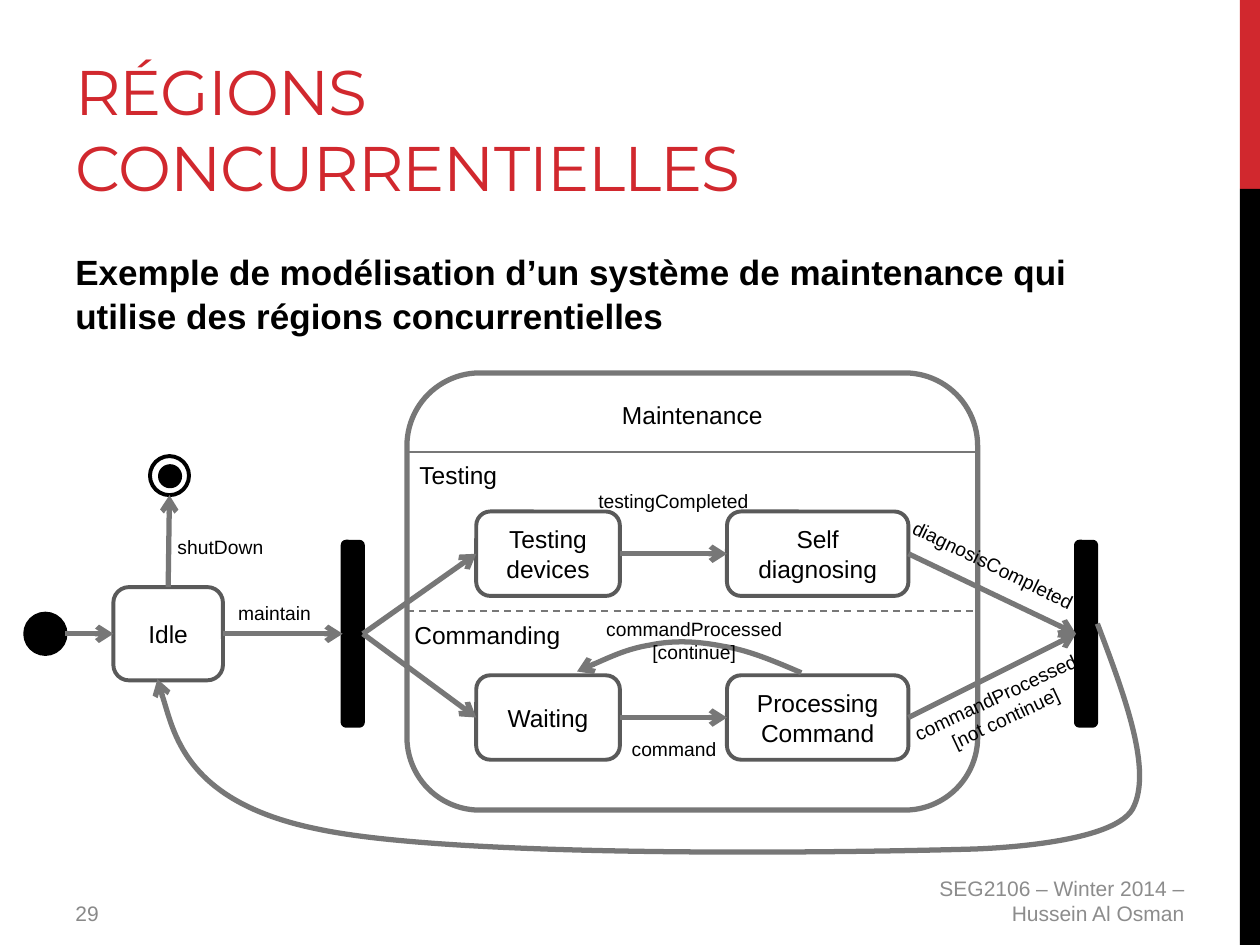
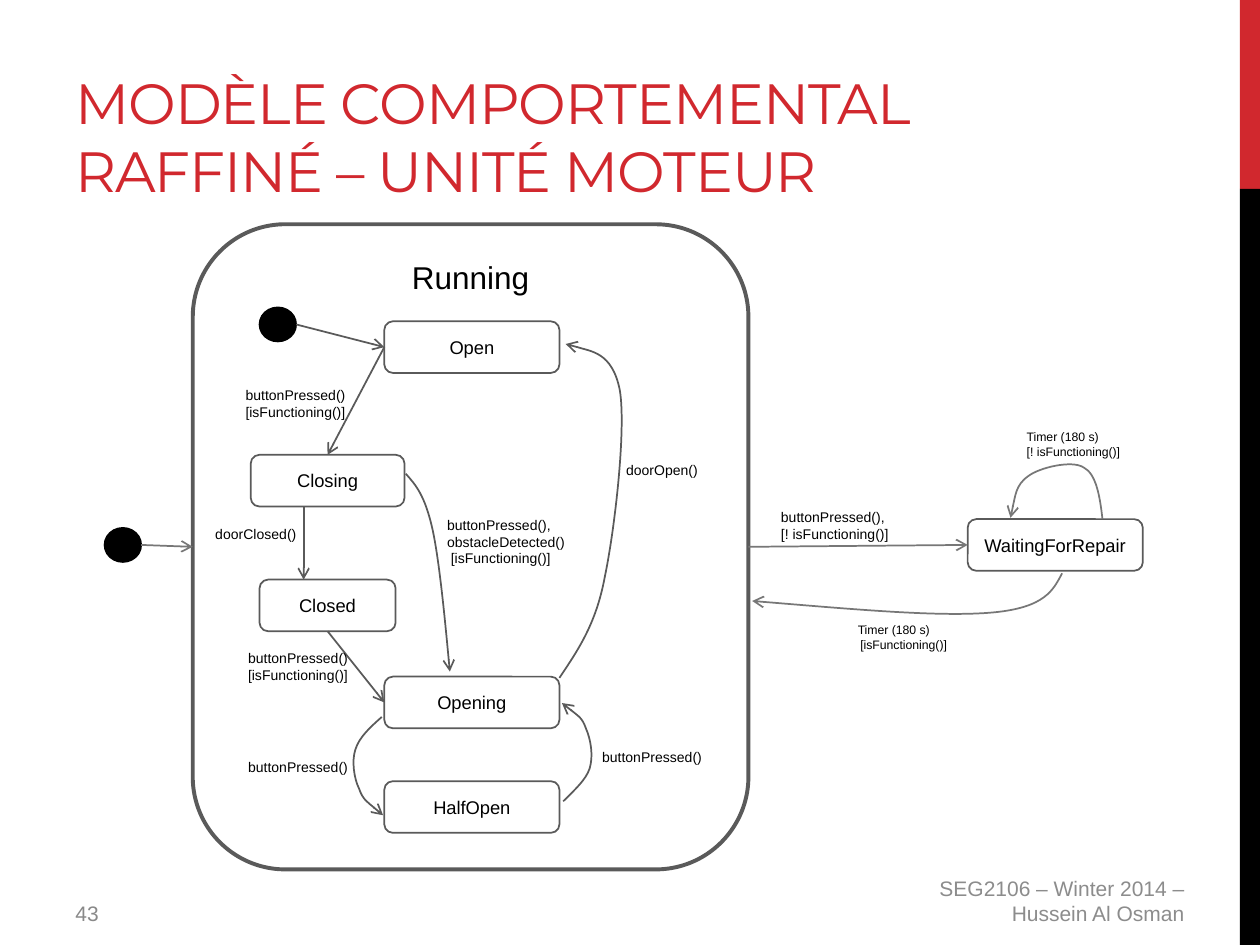
from dataclasses import dataclass
from typing import Any, NamedTuple, Optional

from lxml import etree
from pptx import Presentation
from pptx.dml.color import RGBColor
from pptx.enum.dml import MSO_LINE
from pptx.enum.shapes import MSO_CONNECTOR, MSO_SHAPE
from pptx.enum.text import MSO_ANCHOR, PP_ALIGN
from pptx.oxml.ns import qn
from pptx.util import Inches, Pt

RECTANGLE, ROUNDED, OVAL = MSO_SHAPE.RECTANGLE, MSO_SHAPE.ROUNDED_RECTANGLE, MSO_SHAPE.OVAL
LEFT, CENTER, RIGHT = PP_ALIGN.LEFT, PP_ALIGN.CENTER, PP_ALIGN.RIGHT
TOP, MIDDLE, BOTTOM = MSO_ANCHOR.TOP, MSO_ANCHOR.MIDDLE, MSO_ANCHOR.BOTTOM
STRAIGHT, DASH = MSO_CONNECTOR.STRAIGHT, MSO_LINE.DASH

RED = RGBColor(0xD1, 0x28, 0x2E)
BLACK = RGBColor(0, 0, 0)
DARK_GREY = RGBColor(0x5A, 0x5A, 0x5A)
GREY = RGBColor(0x77, 0x77, 0x77)
FOOTER_GREY = RGBColor(0x8C, 0x8C, 0x8C)
NUMBER_GREY = RGBColor(0x89, 0x89, 0x89)

Point = tuple[float, float]


class Box(NamedTuple):
    """A rectangle in inches, with the points where arrows meet it."""
    left: float
    top: float
    width: float
    height: float

    @property
    def west(self) -> Point:
        return self.left, self.top + self.height / 2

    @property
    def east(self) -> Point:
        return self.left + self.width, self.top + self.height / 2

    @property
    def north(self) -> Point:
        return self.left + self.width / 2, self.top

    @property
    def south(self) -> Point:
        return self.left + self.width / 2, self.top + self.height


class Stroke(NamedTuple):
    color: RGBColor
    width: float


@dataclass
class TextStyle:
    size: float
    color: RGBColor = BLACK
    font: str = "Arial"
    bold: bool = False
    align: Any = LEFT
    anchor: Any = TOP
    line_spacing: Optional[float] = None
    tracking: Optional[int] = None  # hundredths of a point


@dataclass
class Label:
    lines: list[str]
    box: Box
    size: float
    align: Any = LEFT
    rotation: float = 0
    last_indent: float = 0


def apply_format(target: Any, values: dict[str, Any]) -> None:
    for name, value in values.items():
        setattr(target, name, value)


def write(shape: Any, lines: list[str], style: TextStyle) -> None:
    frame = shape.text_frame
    apply_format(frame, {"word_wrap": True, "vertical_anchor": style.anchor})
    for index, line in enumerate(lines):
        paragraph = frame.paragraphs[0] if index == 0 else frame.add_paragraph()
        apply_format(paragraph, {"alignment": style.align, "line_spacing": style.line_spacing})
        run = paragraph.add_run()
        run.text = line
        apply_format(run.font, {"size": Pt(style.size), "name": style.font, "bold": style.bold})
        run.font.color.rgb = style.color
        if style.tracking is not None:
            run.font._element.set("spc", str(style.tracking))


def add_text(slide: Any, lines: list[str], box: Box, style: TextStyle) -> Any:
    shape = slide.shapes.add_textbox(*map(Inches, box))
    write(shape, lines, style)
    return shape


def add_label(slide: Any, label: Label) -> None:
    shape = add_text(slide, label.lines, label.box, TextStyle(label.size, align=label.align))
    shape.rotation = label.rotation
    if label.last_indent:
        properties = shape.text_frame.paragraphs[-1]._p.get_or_add_pPr()
        properties.set("marL", str(Inches(label.last_indent)))


def set_stroke(shape: Any, stroke: Stroke, arrow: bool = False, dash: Any = None) -> None:
    shape.line.color.rgb = stroke.color
    apply_format(shape.line, {"width": Pt(stroke.width), "dash_style": dash})
    if arrow:
        etree.SubElement(shape.line._get_or_add_ln(), qn("a:tailEnd"), type="arrow")


def add_box(slide: Any, kind: Any, box: Box, stroke: Optional[Stroke] = None,
            fill: Optional[RGBColor] = None) -> Any:
    shape = slide.shapes.add_shape(kind, *map(Inches, box))
    shape.shadow.inherit = False
    if fill is None:
        shape.fill.background()
    else:
        shape.fill.solid()
        shape.fill.fore_color.rgb = fill
    if stroke is None:
        shape.line.fill.background()
    else:
        set_stroke(shape, stroke)
    return shape


def add_state(slide: Any, name: str, box: Box, stroke: Stroke, size: float,
              anchor: Any = MIDDLE) -> None:
    shape = add_box(slide, ROUNDED, box, stroke)
    write(shape, [name], TextStyle(size, align=CENTER, anchor=anchor))


def add_line(slide: Any, start: Point, end: Point, stroke: Stroke,
             arrow: bool = True, dash: Any = None) -> None:
    line = slide.shapes.add_connector(STRAIGHT, *map(Inches, (*start, *end)))
    set_stroke(line, stroke, arrow, dash)
    etree.SubElement(line._element.spPr, qn("a:effectLst"))


def add_curve(slide: Any, points: list[Point], stroke: Stroke) -> None:
    """Draw a Bézier arrow: a start, then two controls and an end per segment."""
    start, *others = [(Inches(x), Inches(y)) for x, y in points]
    builder = slide.shapes.build_freeform(*start)
    builder.add_line_segments(others, close=False)
    shape = builder.convert_to_shape()
    outline = next(shape._element.iter(qn("a:path")))
    segments = outline.findall(qn("a:lnTo"))
    for first in range(0, len(segments), 3):
        cubic = etree.SubElement(outline, qn("a:cubicBezTo"))
        for segment in segments[first:first + 3]:
            cubic.append(segment[0])
            outline.remove(segment)
    shape.shadow.inherit = False
    shape.fill.background()
    set_stroke(shape, stroke, arrow=True)


def add_base(presentation: Any, title: str, title_size: float, number: int) -> Any:
    """Add a slide with the side bands, title, footer and number."""
    slide = presentation.slides.add_slide(presentation.slide_layouts[6])
    add_box(slide, RECTANGLE, Box(9.84, 0, 0.16, 1.5), fill=RED)
    add_box(slide, RECTANGLE, Box(9.84, 1.5, 0.16, 6), fill=BLACK)
    add_text(slide, [title], Box(0.5, 0.17, 7.58, 1.5),
             TextStyle(title_size, RED, "Montserrat", anchor=BOTTOM, tracking=-60))
    add_text(slide, ["SEG2106 – Winter 2014 – Hussein Al Osman"], Box(7.17, 6.95, 2.33, 0.4),
             TextStyle(12, FOOTER_GREY, align=RIGHT, anchor=MIDDLE))
    add_text(slide, [str(number)], Box(0.5, 7.1, 3.75, 0.31), TextStyle(12, NUMBER_GREY))
    return slide


def build_concurrent_regions(presentation: Any) -> None:
    slide = add_base(presentation, "RÉGIONS CONCURRENTIELLES", 36, 29)
    add_text(slide, ["Exemple de modélisation d’un système de maintenance qui "
                     "utilise des régions concurrentielles"],
             Box(0.5, 1.92, 8.33, 0.89), TextStyle(20, bold=True, line_spacing=1.05))
    border, flow, divider = Stroke(DARK_GREY, 2.25), Stroke(GREY, 3), Stroke(GREY, 1)
    solid = Stroke(BLACK, 2.25)

    # States
    maintenance = Box(3.23, 2.96, 4.53, 3.47)
    idle = Box(0.9, 4.66, 0.87, 0.74)
    add_state(slide, "Maintenance", maintenance, flow, 14, TOP)
    add_state(slide, "Idle", idle, border, 14)

    # Fork, join, initial and final nodes
    fork, join = Box(2.72, 4.3, 0.16, 1.46), Box(8.54, 4.3, 0.16, 1.46)
    initial, final = Box(0.2, 4.87, 0.32, 0.32), Box(1.19, 3.62, 0.31, 0.31)
    for bar in (fork, join):
        add_box(slide, ROUNDED, bar, solid, BLACK)
    for node in (initial, Box(1.27, 3.7, 0.16, 0.16)):
        add_box(slide, OVAL, node, solid, BLACK)
    add_box(slide, OVAL, final, solid)

    # One row of two states per region
    for top, first, second in ((4.06, "Testing devices", "Self diagnosing"),
                               (5.36, "Waiting", "Processing Command")):
        entry, work = Box(3.78, top, 1.14, 0.67), Box(5.77, top, 1.44, 0.67)
        add_state(slide, first, entry, border, 14)
        add_state(slide, second, work, border, 14)
        for start, end in ((fork.east, entry.west), (entry.east, work.west),
                           (work.east, join.west)):
            add_line(slide, start, end, flow)
    for start, end in ((initial.east, idle.west), (idle.east, fork.west),
                       (idle.north, final.south)):
        add_line(slide, start, end, flow)

    # Region dividers
    for y, dash in ((3.59, None), (4.85, DASH)):
        add_line(slide, (3.23, y), (7.76, y), divider, arrow=False, dash=dash)

    # Return transitions
    add_curve(slide, [(6.36, 5.34), (6.15, 5.25), (5.94, 5.16), (5.74, 5.13), (5.54, 5.09),
                      (5.35, 5.08), (5.16, 5.12), (4.97, 5.15), (4.58, 5.33), (4.58, 5.33)], flow)
    add_curve(slide, [(8.71, 4.95), (8.93, 5.53), (9.15, 6.12), (8.99, 6.42), (8.82, 6.72),
                      (7.69, 6.74), (7.69, 6.74), (6.62, 6.77), (3.59, 6.81), (2.52, 6.58),
                      (1.44, 6.36), (1.25, 5.39), (1.25, 5.39)], flow)

    for label in (
        Label(["Testing"], Box(3.23, 3.6, 1.02, 0.34), 14),
        Label(["Commanding"], Box(3.19, 4.87, 1.37, 0.34), 14),
        Label(["command"], Box(4.75, 5.8, 1.2, 0.29), 11, CENTER),
        Label(["commandProcessed", "[continue]"], Box(4.29, 4.85, 2.44, 0.47), 11, CENTER),
        Label(["commandProcessed", "[not continue]"], Box(6.72, 5.38, 2.44, 0.47), 11, CENTER,
              334.8),
        Label(["maintain"], Box(1.61, 4.72, 1.14, 0.29), 11, CENTER),
        Label(["diagnosisCompleted"], Box(6.66, 4.34, 2.44, 0.29), 11, CENTER, 25.9),
        Label(["testingCompleted"], Box(4.59, 3.83, 1.51, 0.29), 11, CENTER),
        Label(["shutDown"], Box(1.18, 4.2, 1.14, 0.29), 11, CENTER),
    ):
        add_label(slide, label)


def build_motor_unit(presentation: Any) -> None:
    slide = add_base(presentation, "MODÈLE COMPORTEMENTAL RAFFINÉ – UNITÉ MOTEUR", 32.4, 43)
    inner, outer = Stroke(DARK_GREY, 1), Stroke(GREY, 1)

    # States
    running = Box(1.53, 1.78, 4.41, 5.12)
    add_state(slide, "Running", running, Stroke(DARK_GREY, 2.25), 18, TOP)
    states = {name: Box(left, top, width, 0.41) for name, left, top, width in (
        ("Open", 3.05, 2.55, 1.39), ("Closing", 1.99, 3.61, 1.22), ("Closed", 2.06, 4.6, 1.08),
        ("Opening", 3.05, 5.37, 1.39), ("HalfOpen", 3.05, 6.2, 1.39),
        ("WaitingForRepair", 7.68, 4.12, 1.39))}
    for name, box in states.items():
        add_state(slide, name, box, inner, 10.5)
    inner_start, outer_start = Box(2.06, 2.44, 0.29, 0.27), Box(0.83, 4.19, 0.29, 0.27)
    for node in (inner_start, outer_start):
        add_box(slide, OVAL, node, Stroke(BLACK, 1), BLACK)

    # Straight transitions
    for start, end, stroke in (
        (inner_start.east, states["Open"].west, inner),
        (states["Open"].west, states["Closing"].north, inner),
        ((2.41, 4.02), (2.41, 4.6), inner),
        (states["Closed"].south, states["Opening"].west, inner),
        (outer_start.east, running.west, outer),
        (running.east, states["WaitingForRepair"].west, outer),
    ):
        add_line(slide, start, end, stroke)

    # Curved transitions
    for points, stroke in (
        ([(3.22, 3.76), (3.3, 3.85), (3.37, 3.93), (3.43, 4.19), (3.49, 4.45), (3.57, 5.33),
          (3.57, 5.33)], inner),
        ([(3.03, 5.69), (2.94, 5.77), (2.85, 5.85), (2.82, 5.95), (2.79, 6.04), (2.81, 6.18),
          (2.85, 6.26), (2.88, 6.35), (3.04, 6.47), (3.04, 6.47)], inner),
        ([(4.47, 6.36), (4.56, 6.27), (4.65, 6.19), (4.68, 6.1), (4.71, 6), (4.69, 5.87),
          (4.65, 5.78), (4.62, 5.69), (4.46, 5.58), (4.46, 5.58)], inner),
        ([(4.44, 5.38), (4.58, 5.17), (4.73, 4.96), (4.8, 4.58), (4.88, 4.2), (4.97, 3.41),
          (4.92, 3.1), (4.86, 2.79), (4.49, 2.73), (4.49, 2.73)], inner),
        ([(8.75, 4.12), (8.73, 3.94), (8.7, 3.76), (8.6, 3.71), (8.51, 3.65), (8.25, 3.71),
          (8.16, 3.78), (8.06, 3.85), (8.02, 4.11), (8.02, 4.11)], outer),
        ([(8.43, 4.55), (8.36, 4.68), (8.3, 4.82), (7.89, 4.86), (7.47, 4.9), (6.72, 4.83),
          (5.97, 4.77)], outer),
    ):
        add_curve(slide, points, stroke)

    pressed, functioning, failing = "buttonPressed()", "[isFunctioning()]", "[! isFunctioning()]"
    timer = "Timer (180 s)"
    for label in (
        Label([f"{pressed},", "obstacleDetected()", functioning], Box(3.45, 4.05, 1.23, 0.5), 8,
              last_indent=0.03),
        Label([pressed], Box(1.87, 5.97, 1.05, 0.23), 8),
        Label([pressed], Box(4.68, 5.89, 1.13, 0.24), 8),
        Label([f"{pressed} {functioning}"], Box(1.85, 3.02, 1.39, 0.37), 8),
        Label(["doorOpen()"], Box(4.87, 3.61, 1.18, 0.31), 8),
        Label(["doorClosed()"], Box(1.61, 4.12, 0.89, 0.24), 8),
        Label([f"{pressed} {functioning}"], Box(1.87, 5.11, 1.39, 0.37), 8),
        Label([f"{pressed},", failing], Box(6.1, 3.99, 1.23, 0.37), 8),
        Label([timer, failing], Box(8.05, 3.36, 1.12, 0.34), 7),
        Label([timer, functioning], Box(6.71, 4.89, 0.97, 0.34), 7, last_indent=0.02),
    ):
        add_label(slide, label)


def main() -> None:
    presentation = Presentation()
    apply_format(presentation, {"slide_width": Inches(10), "slide_height": Inches(7.5)})
    build_concurrent_regions(presentation)
    build_motor_unit(presentation)
    presentation.save("out.pptx")


if __name__ == "__main__":
    main()
